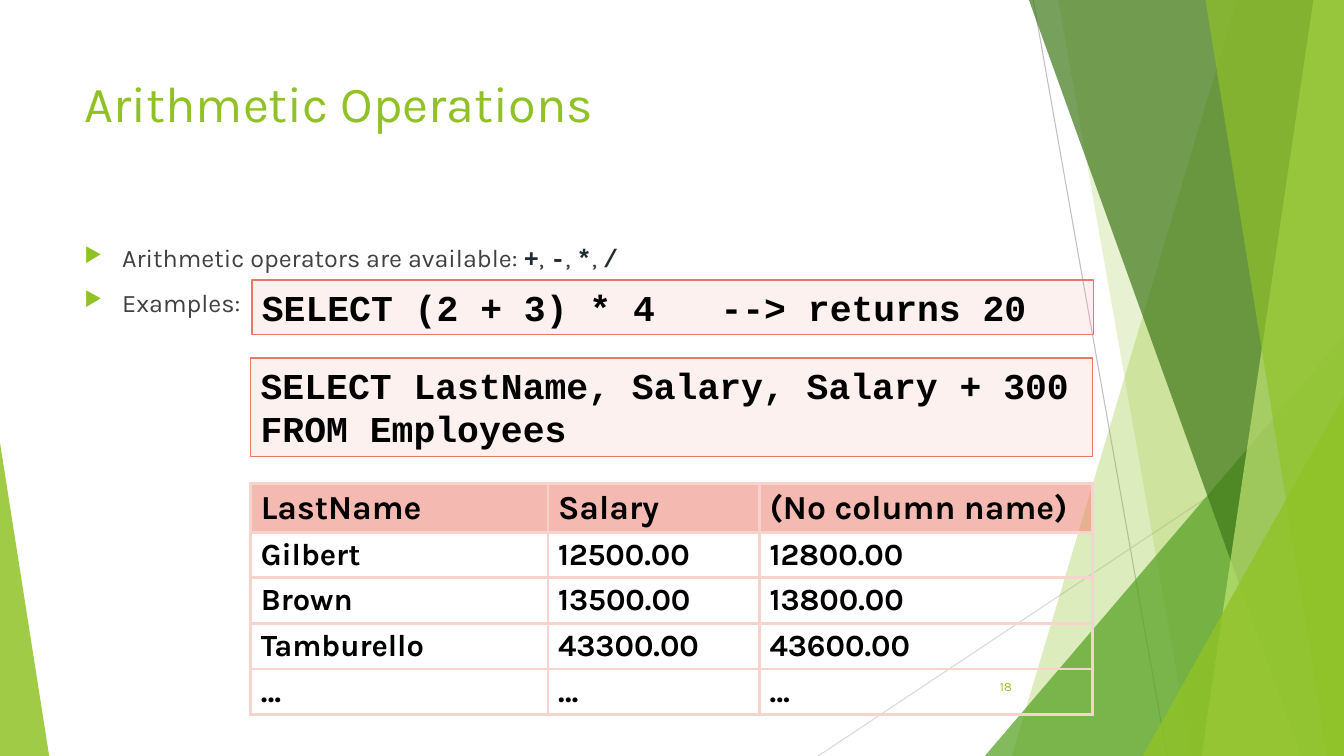
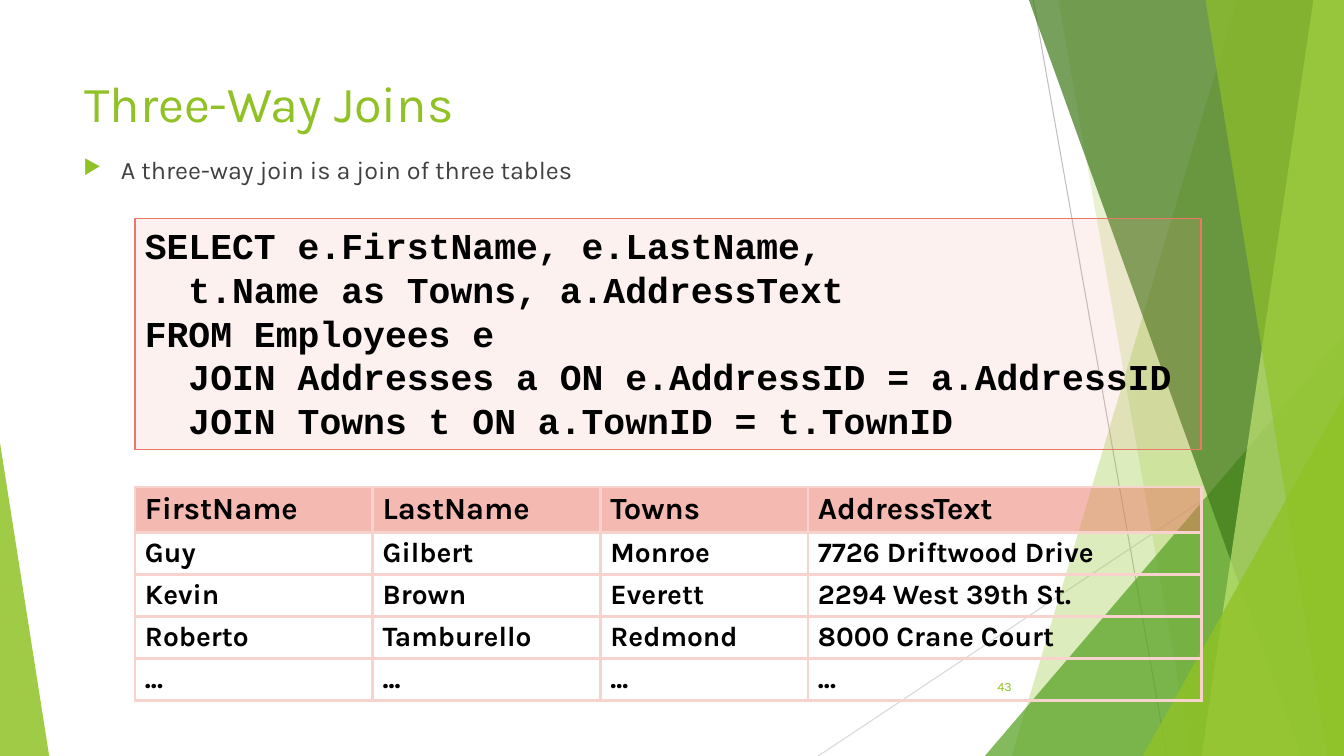
"""Build two slides on SQL arithmetic and three-way joins."""
from lxml import etree
from pptx import Presentation
from pptx.dml.color import RGBColor
from pptx.enum import shapes, text
from pptx.oxml import ns
from pptx.util import Cm, Pt

WIDTH, HEIGHT = 33.87, 19.05
BODY_FONT, CODE_FONT = "Karla", "Courier New"
GREEN = RGBColor(0x90, 0xC2, 0x26)
MID_GREEN = RGBColor(0x54, 0xA0, 0x21)
DARK_GREEN = RGBColor(0x3F, 0x78, 0x19)
PALE_GREEN = RGBColor(0xC0, 0xE4, 0x74)
GREY = RGBColor(0xBF, 0xBF, 0xBF)
PALE_GREY = RGBColor(0xD9, 0xD9, 0xD9)
TEXT_GREY = RGBColor(0x40, 0x40, 0x40)
OPERATOR_INK = RGBColor(0x21, 0x2D, 0x32)
BLACK = RGBColor(0, 0, 0)
CORAL = RGBColor(0xEB, 0x77, 0x66)
PALE_CORAL = RGBColor(0xF2, 0xA4, 0x99)
BORDER = RGBColor(0xF8, 0xD2, 0xCC)

HAIRLINES = [
    (26.04, 0, 29.41, HEIGHT, GREY),
    (WIDTH, 10.24, 20.62, HEIGHT, PALE_GREY),
]
FACETS = [
    ("band", (31.17, 25.5), GREEN, 30),
    ("band", (26.67, 30.02), GREEN, 20),
    ("triangle", (24.82, WIDTH, 8.46, 1), MID_GREEN, 72),
    ("band", (25.93, 32.79), DARK_GREEN, 70),
    ("band", (33.1, 30.28), PALE_GREEN, 70),
    ("band", (30.38, 33.45), GREEN, 65),
    ("triangle", (28.8, WIDTH, 9.98, 1), GREEN, 80),
    ("triangle", (0, 1.24, 11.15, 0), GREEN, 85),
]
OPERATORS = ["+", "-", "*", "/"]
SLIDES = [
    {
        "title": "Arithmetic Operations",
        "number": "18",
        "body": (1.88, 5.99),
        "bullets": [("Arithmetic operators are available: ", OPERATORS), ("Examples:", [])],
        "code": [
            ((6.35, 7.06, 21.21, 1.37), ["SELECT (2 + 3) * 4   --> returns 20"]),
            ((6.32, 9.02, 21.21, 2.49),
             ["SELECT LastName, Salary, Salary + 300", "FROM Employees"]),
        ],
        "table": {
            "at": (6.32, 12.19),
            "columns": [7.49, 5.33, 8.39],
            "heights": (1.22, 1.15),
            "sizes": (24, 22),
            "anchor": text.MSO_ANCHOR.MIDDLE,
            "rows": [
                ("LastName", "Salary", "(No column name)"),
                ("Gilbert", "12500.00", "12800.00"),
                ("Brown", "13500.00", "13800.00"),
                ("Tamburello", "43300.00", "43600.00"),
                ("…", "…", "…"),
            ],
        },
    },
    {
        "title": "Three-Way Joins",
        "number": "43",
        "body": (1.85, 3.76),
        "bullets": [("A three-way join is a join of three tables", [])],
        "code": [
            ((3.4, 5.51, 26.87, 5.82), [
                "SELECT e.FirstName, e.LastName,",
                "  t.Name as Towns, a.AddressText",
                "FROM Employees e",
                "  JOIN Addresses a ON e.AddressID = a.AddressID",
                "  JOIN Towns t ON a.TownID = t.TownID",
            ]),
        ],
        "table": {
            "at": (3.4, 12.27),
            "columns": [5.99, 5.74, 5.23, 9.91],
            "heights": (1.13, 1.06),
            "sizes": (22, 20),
            "anchor": text.MSO_ANCHOR.TOP,
            "rows": [
                ("FirstName", "LastName", "Towns", "AddressText"),
                ("Guy", "Gilbert", "Monroe", "7726 Driftwood Drive"),
                ("Kevin", "Brown", "Everett", "2294 West 39th St."),
                ("Roberto", "Tamburello", "Redmond", "8000 Crane Court"),
                ("...", "...", "...", "..."),
            ],
        },
    },
]


def add_xml(parent, tag, **attributes):
    return etree.SubElement(parent, ns.qn(tag), attributes)


def fill_with(fill, properties, color, opacity):
    fill.solid()
    fill.fore_color.rgb = color
    color_element = properties.find(ns.qn("a:solidFill"))[0]
    add_xml(color_element, "a:alpha", val=str(opacity * 1000))


def style_font(font, name, size, color, bold=False):
    font.name, font.size, font.bold = name, Pt(size), bold
    font.color.rgb = color


def add_text_box(slide, left, top, width, height):
    frame = slide.shapes.add_textbox(Cm(left), Cm(top), Cm(width), Cm(height)).text_frame
    frame.word_wrap = True
    return frame


def add_band(slide, top_x, bottom_x):
    corners = [(WIDTH, 0), (WIDTH, HEIGHT), (bottom_x, HEIGHT)]
    builder = slide.shapes.build_freeform(Cm(top_x), 0)
    builder.add_line_segments([(Cm(x), Cm(y)) for x, y in corners])
    return builder.convert_to_shape()


def add_triangle(slide, left, right, top, apex):
    shape = slide.shapes.add_shape(
        shapes.MSO_SHAPE.ISOSCELES_TRIANGLE,
        Cm(left), Cm(top), Cm(right - left), Cm(HEIGHT - top))
    shape.adjustments[0] = apex
    return shape


def add_backdrop(slide):
    for x1, y1, x2, y2, color in HAIRLINES:
        line = slide.shapes.add_connector(
            shapes.MSO_CONNECTOR.STRAIGHT, Cm(x1), Cm(y1), Cm(x2), Cm(y2))
        line.line.color.rgb = color
        line.line.width = Pt(0.75)
        add_xml(line.element.spPr, "a:effectLst")
    builders = {"band": add_band, "triangle": add_triangle}
    for kind, geometry, color, opacity in FACETS:
        facet = builders[kind](slide, *geometry)
        facet.shadow.inherit = False
        fill_with(facet.fill, facet.element.spPr, color, opacity)
        facet.line.fill.background()


def add_title(slide, title):
    paragraph = add_text_box(slide, 1.88, 1.7, 23.88, 3.66).paragraphs[0]
    paragraph.text = title
    style_font(paragraph.font, BODY_FONT, 36, GREEN)


def add_number(slide, number):
    frame = add_text_box(slide, 23.85, 16.79, 1.9, 1.02)
    frame.vertical_anchor = text.MSO_ANCHOR.MIDDLE
    paragraph = frame.paragraphs[0]
    paragraph.text = number
    paragraph.alignment = text.PP_ALIGN.RIGHT
    style_font(paragraph.font, BODY_FONT, 9, GREEN)


def add_run(paragraph, content, *style):
    run = paragraph.add_run()
    run.text = content
    style_font(run.font, *style)


def add_bullets(slide, position, bullets):
    frame = add_text_box(slide, *position, 23.88, 10.77)
    for index, (lead, operators) in enumerate(bullets):
        paragraph = frame.add_paragraph() if index else frame.paragraphs[0]
        paragraph.space_before = Pt(10)
        properties = paragraph._p.get_or_add_pPr()
        properties.set("marL", str(Cm(0.95)))
        properties.set("indent", str(-Cm(0.95)))
        add_xml(add_xml(properties, "a:buClr"), "a:srgbClr", val=str(GREEN))
        add_xml(properties, "a:buSzPct", val="80000")
        add_xml(properties, "a:buChar", char="▶")
        add_run(paragraph, lead, BODY_FONT, 18, TEXT_GREY)
        for place, operator in enumerate(operators):
            if place:
                add_run(paragraph, ", ", BODY_FONT, 18, TEXT_GREY)
            add_run(paragraph, operator, CODE_FONT, 18, OPERATOR_INK, True)


def add_code(slide, box, lines):
    shape = slide.shapes.add_shape(shapes.MSO_SHAPE.RECTANGLE, *map(Cm, box))
    shape.shadow.inherit = False
    fill_with(shape.fill, shape.element.spPr, PALE_CORAL, 15)
    shape.line.color.rgb = CORAL
    shape.line.width = Pt(1)
    frame = shape.text_frame
    frame.word_wrap = True
    frame.vertical_anchor = text.MSO_ANCHOR.TOP
    frame.text = "\n".join(lines)
    for paragraph in frame.paragraphs:
        paragraph.alignment = text.PP_ALIGN.LEFT
        style_font(paragraph.font, CODE_FONT, 26, BLACK, True)


def add_borders(cell):
    properties = cell._tc.get_or_add_tcPr()
    for side in ("L", "R", "T", "B"):
        line = add_xml(properties, f"a:ln{side}", w=str(Pt(2.25)))
        add_xml(add_xml(line, "a:solidFill"), "a:srgbClr", val=str(BORDER))
    return properties


def add_result(slide, result):
    rows, columns = result["rows"], result["columns"]
    head_height, row_height = result["heights"]
    heights = [head_height] + [row_height] * (len(rows) - 1)
    left, top = result["at"]
    table = slide.shapes.add_table(
        len(rows), len(columns), Cm(left), Cm(top),
        Cm(sum(columns)), Cm(sum(heights))).table
    table.first_row = table.horz_banding = False
    for column, width in zip(table.columns, columns):
        column.width = Cm(width)
    for index, (row, height, values) in enumerate(zip(table.rows, heights, rows)):
        row.height = Cm(height)
        size = result["sizes"][min(index, 1)]
        for cell, value in zip(row.cells, values):
            properties = add_borders(cell)
            if index:
                cell.fill.background()
            else:
                fill_with(cell.fill, properties, CORAL, 50)
            cell.vertical_anchor = result["anchor"]
            cell.text = value
            paragraph = cell.text_frame.paragraphs[0]
            paragraph.line_spacing = 0.95
            style_font(paragraph.font, BODY_FONT, size, BLACK, True)


def main():
    presentation = Presentation()
    presentation.slide_width, presentation.slide_height = Cm(WIDTH), Cm(HEIGHT)
    for content in SLIDES:
        slide = presentation.slides.add_slide(presentation.slide_layouts[6])
        add_backdrop(slide)
        add_title(slide, content["title"])
        add_bullets(slide, content["body"], content["bullets"])
        add_number(slide, content["number"])
        for box, lines in content["code"]:
            add_code(slide, box, lines)
        add_result(slide, content["table"])
    presentation.save("out.pptx")


if __name__ == "__main__":
    main()
